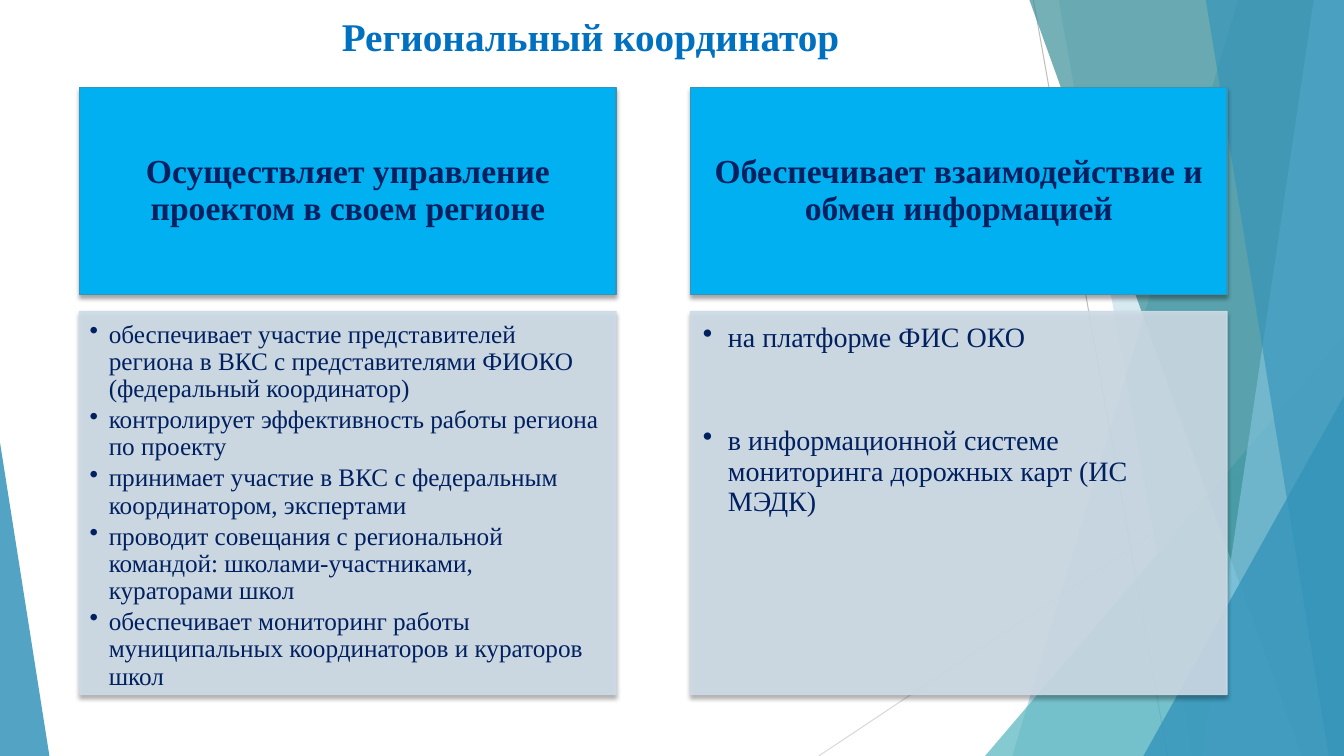
from lxml import etree
from pptx import Presentation
from pptx.dml.color import RGBColor
from pptx.enum.shapes import MSO_CONNECTOR, MSO_SHAPE
from pptx.enum.text import MSO_ANCHOR, PP_ALIGN
from pptx.oxml.ns import qn
from pptx.util import Inches, Pt

STRAIGHT = MSO_CONNECTOR.STRAIGHT
RECTANGLE, TRIANGLE = MSO_SHAPE.RECTANGLE, MSO_SHAPE.ISOSCELES_TRIANGLE
TOP, MIDDLE = MSO_ANCHOR.TOP, MSO_ANCHOR.MIDDLE
LEFT, CENTER = PP_ALIGN.LEFT, PP_ALIGN.CENTER
FONT = "Times New Roman"
WIDTH, HEIGHT = 13.33, 7.5
COLORS = {
    "title": "0070C0", "text": "002060", "header": "00B0F0", "panel": "CEDCE7",
    "blue": "3494BA", "light_blue": "7FC1DB", "turquoise": "58B6C0", "teal": "3A8F98",
    "gray": "BFBFBF", "light_gray": "D9D9D9",
}


def paint(shape, fill, opacity=100, line=None):
    shape.shadow.inherit = False
    shape.fill.solid()
    shape.fill.fore_color.rgb = RGBColor.from_string(COLORS[fill])
    if line:
        shape.line.color.rgb = RGBColor.from_string(COLORS[line])
        shape.line.width = Pt(1)
    else:
        shape.line.fill.background()
    if opacity < 100:
        for color in shape._element.spPr.iter(qn("a:srgbClr")):
            etree.SubElement(color, qn("a:alpha"), val=str(opacity * 1000))


def style_text(paragraph, size, color, bold=False):
    for run in paragraph.runs:
        run.font.name = FONT
        run.font.size = Pt(size)
        run.font.bold = bold
        run.font.color.rgb = RGBColor.from_string(COLORS[color])


presentation = Presentation()
presentation.slide_width = Inches(WIDTH)
presentation.slide_height = Inches(HEIGHT)
slide = presentation.slides.add_slide(presentation.slide_layouts[5])
shapes = slide.shapes

title = shapes.title
title.left, title.top, title.width, title.height = map(Inches, (3.29, 0.07, 5.19, 0.57))
title.text_frame.text = "Региональный координатор"
title.text_frame.word_wrap = False
title.text_frame.vertical_anchor = TOP
title.text_frame.paragraphs[0].alignment = LEFT
style_text(title.text_frame.paragraphs[0], 28, "title", True)

for x1, y1, x2, y2, color in [
    (10.25, 0, 11.58, HEIGHT, "gray"),
    (WIDTH, 4.03, 8.12, HEIGHT, "light_gray"),
]:
    connector = shapes.add_connector(STRAIGHT, *map(Inches, (x1, y1, x2, y2)))
    connector.line.color.rgb = RGBColor.from_string(COLORS[color])
    connector.line.width = Pt(0.75)
    etree.SubElement(connector._element.spPr, qn("a:effectLst"))

BANDS_AND_TRIANGLES = [
    ("blue", 30, (12.28, 10.04)),
    ("blue", 20, (10.5, 11.83)),
    ("turquoise", 72, (9.77, 3.33, 3.56, 1)),
    ("teal", 70, (10.21, 12.91)),
    ("light_blue", 70, (13.03, 11.92)),
    ("blue", 65, (11.96, 13.18)),
    ("blue", 80, (11.34, 3.93, 1.99, 1)),
    ("blue", 85, (0, 4.39, 0.49, 0)),
]
for color, opacity, geometry in BANDS_AND_TRIANGLES:
    if len(geometry) == 2:
        top_x, bottom_x = geometry
        builder = shapes.build_freeform(Inches(top_x), 0)
        corners = [(WIDTH, 0), (WIDTH, HEIGHT), (bottom_x, HEIGHT)]
        builder.add_line_segments([(Inches(x), Inches(y)) for x, y in corners])
        decoration = builder.convert_to_shape()
    else:
        left, top, width, apex = geometry
        decoration = shapes.add_shape(
            TRIANGLE, Inches(left), Inches(top), Inches(width), Inches(HEIGHT - top))
        decoration.adjustments[0] = apex
    paint(decoration, color, opacity)

COLUMNS = [
    (0.79, "Осуществляет управление проектом в своем регионе", 18, 2.7, 0.19,
     (0.1, 0.1, 0.14, 0.16), [
        "обеспечивает участие представителей региона в ВКС с представителями ФИОКО (федеральный координатор)",
        "контролирует эффективность работы региона по проекту",
        "принимает участие в ВКС с федеральным координатором, экспертами",
        "проводит совещания с региональной командой: школами-участниками, кураторами школ",
        "обеспечивает мониторинг работы муниципальных координаторов и кураторов школ",
    ]),
    (6.85, "Обеспечивает взаимодействие и обмен информацией", 20, 52, 0.25,
     (0.12, 0.12, 0.16, 0.17), [
        "на платформе ФИС ОКО",
        "в информационной системе мониторинга дорожных карт (ИС МЭДК)",
    ]),
]
for left, heading, size, gap, indent, panel_insets, duties in COLUMNS:
    header = shapes.add_shape(RECTANGLE, *map(Inches, (left, 0.87, 5.32, 2.05)))
    panel = shapes.add_shape(RECTANGLE, *map(Inches, (left, 3.09, 5.32, 3.8)))
    paint(header, "header", line="blue")
    paint(panel, "panel", 90, "panel")

    for box, insets, anchor, text in [
        (header, (0.19, 0.11, 0.19, 0.11), MIDDLE, heading),
        (panel, panel_insets, TOP, "\n".join(duties)),
    ]:
        effects = box._element.spPr.find(qn("a:effectLst"))
        shadow = etree.SubElement(
            effects, qn("a:outerShdw"), blurRad=str(Pt(3)), dist=str(Pt(2)),
            dir="5400000", rotWithShape="0")
        shadow_color = etree.SubElement(shadow, qn("a:srgbClr"), val="000000")
        etree.SubElement(shadow_color, qn("a:alpha"), val="35000")

        frame = box.text_frame
        frame.text = text
        frame.word_wrap = True
        frame.vertical_anchor = anchor
        (frame.margin_left, frame.margin_top,
         frame.margin_right, frame.margin_bottom) = map(Inches, insets)

    heading_paragraph = header.text_frame.paragraphs[0]
    heading_paragraph.alignment = CENTER
    heading_paragraph.line_spacing = 0.9
    style_text(heading_paragraph, 24, "text", True)

    for paragraph in panel.text_frame.paragraphs:
        paragraph.alignment = LEFT
        paragraph.line_spacing = 0.9
        paragraph.space_after = Pt(gap)
        properties = paragraph._p.get_or_add_pPr()
        properties.set("marL", str(Inches(indent)))
        properties.set("indent", str(-Inches(indent)))
        etree.SubElement(properties, qn("a:buChar"), char="•")
        style_text(paragraph, size, "text")

presentation.save("out.pptx")
